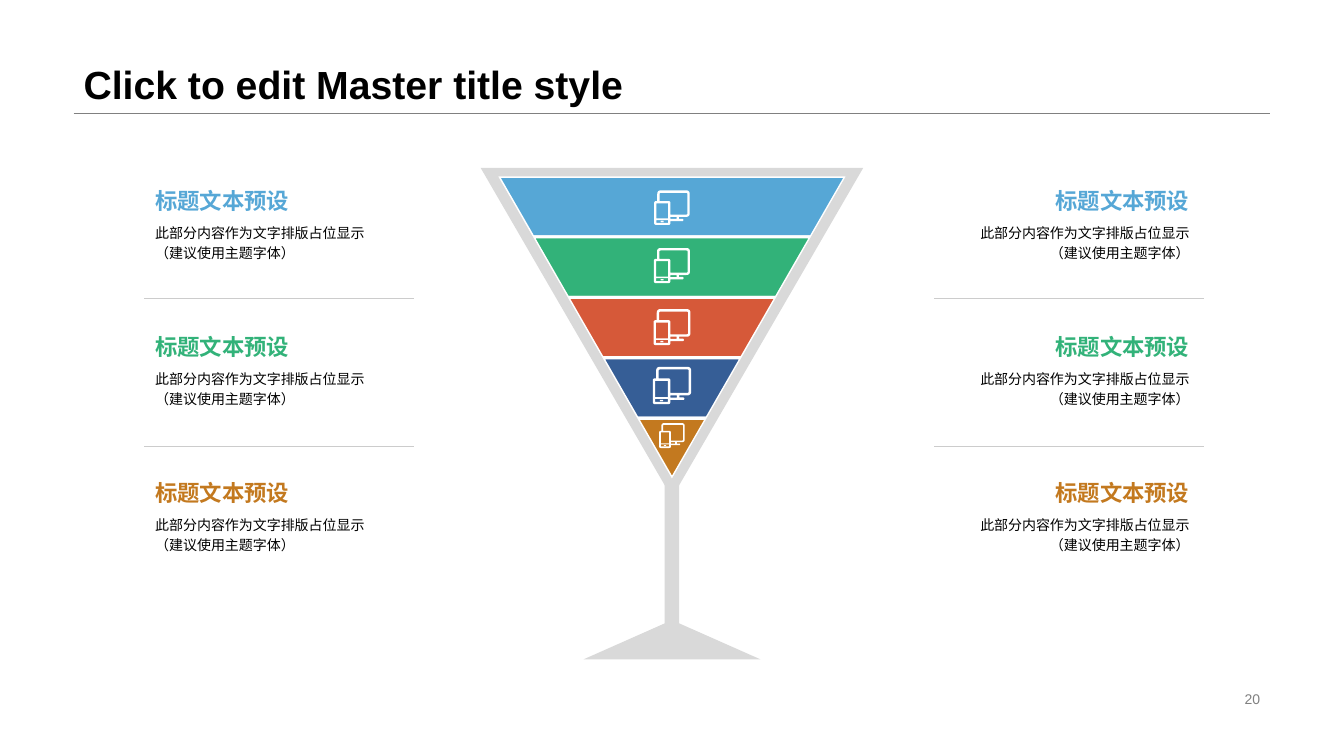
from pptx import Presentation
from pptx.dml.color import RGBColor
from pptx.enum.shapes import MSO_CONNECTOR as Connector, MSO_SHAPE as Shape
from pptx.enum.text import MSO_ANCHOR as Anchor, PP_ALIGN as Align
from pptx.oxml.ns import qn
from pptx.util import Pt
from lxml import etree

# Content
TITLE = "Click to edit Master title style"
PAGE_NUMBER = "20"
HEADING = "标题文本预设"
BODY = "此部分内容作为文字排版占位显示\v（建议使用主题字体）"
FONT = "Arial"
COLORS = {
    "blue": "56A7D6", "green": "32B279", "red": "D65939", "navy": "365E96",
    "amber": "C3791F", "glass": "D9D9D9", "white": "FFFFFF", "black": "000000",
    "grey": "808080", "divider": "CCCCCC",
}
# Band colour, icon top, icon width
BANDS = [
    ("blue", 136, 25.4), ("green", 177.2, 25.8), ("red", 220.8, 26.4),
    ("navy", 262, 27.4), ("amber", 302.3, 18.2),
]
ENTRY_COLORS = ["blue", "green", "amber"]
# Text left, divider left, alignment
COLUMNS = [(110.9, 103.2, Align.LEFT), (643.7, 667.3, Align.RIGHT)]

# Device icon on a 38-unit wide grid: x, y, corner radius
ICON_WIDTH = 38
ICON = [
    [(3.3, 0, 4), (38, 0, 4), (38, 28.4, 4), (26.3, 28.4, 0), (26.3, 30.4, 0),
     (31.2, 30.4, 1.2), (31.2, 32.9, 1.2), (17.4, 32.9, 0), (17.4, 37, 2.3),
     (0, 37, 2.3), (0, 11.4, 2.3), (3.3, 11.4, 0)],
    [(5.8, 2.6, 1.4), (35.6, 2.6, 1.4), (35.6, 25.9, 1.4), (17.4, 25.9, 0),
     (17.4, 11.4, 2.3), (5.8, 11.4, 0)],
    [(2.4, 13.9, 0), (15, 13.9, 0), (15, 30, 0), (2.4, 30, 0)],
    [(2.4, 31.7, 0), (15, 31.7, 0), (15, 34.8, 0), (2.4, 34.8, 0)],
    [(17.4, 28.4, 0), (23.9, 28.4, 0), (23.9, 30.5, 0), (17.4, 30.5, 0)],
    [(7, 32.7, 0.6), (10.2, 32.7, 0.6), (10.2, 34, 0.6), (7, 34, 0.6)],
]

# Glass geometry
CENTER = 480
RIM_HALF, RIM_TOP, RIM_TIP = 136.6, 120, 355.5
BOWL_HALF, BOWL_TOP, BOWL_TIP = 124.2, 126, 342
BAND_HEIGHT = (BOWL_TIP - BOWL_TOP) / len(BANDS)

deck = Presentation()
deck.slide_width, deck.slide_height = Pt(960), Pt(540)
page = deck.slides.add_slide(deck.slide_layouts[6])


def rgb(name):
    return RGBColor.from_string(COLORS[name])


def paint(shape, fill, line=None):
    shape.shadow.inherit = False
    shape.fill.solid()
    shape.fill.fore_color.rgb = rgb(fill)
    if line:
        shape.line.color.rgb = rgb(line)
        shape.line.width = Pt(2.25)
    else:
        shape.line.fill.background()


def add_outline(contours, fill, line=None):
    builder = None
    for contour in contours:
        points = [(Pt(x), Pt(y)) for x, y in contour]
        if builder is None:
            builder = page.shapes.build_freeform(*points[0], scale=1.0)
        else:
            builder.move_to(*points[0])
        builder.add_line_segments(points[1:], close=True)
    paint(builder.convert_to_shape(), fill, line)


def add_rule(left, right, y, color, width):
    rule = page.shapes.add_connector(
        Connector.STRAIGHT, Pt(left), Pt(y), Pt(right), Pt(y))
    rule.line.color.rgb = rgb(color)
    rule.line.width = Pt(width)
    etree.SubElement(rule._element.spPr, qn("a:effectLst"))


def add_text(text, area, size, color, bold=False, align=Align.LEFT,
             anchor=Anchor.TOP, spacing=1.0, inset=0):
    box = page.shapes.add_textbox(*[Pt(value) for value in area])
    frame = box.text_frame
    frame.word_wrap = True
    frame.vertical_anchor = anchor
    frame.margin_left = frame.margin_right = Pt(inset)
    frame.margin_top = frame.margin_bottom = Pt(inset / 2)
    para = frame.paragraphs[0]
    para.text = text
    para.alignment = align
    para.line_spacing = spacing
    for span in para.runs:
        span.font.name = FONT
        span.font.size = Pt(size)
        span.font.bold = bold
        span.font.color.rgb = rgb(color)


def bowl_edge(y):
    """Half the inner bowl width at height y."""
    return BOWL_HALF * (BOWL_TIP - y) / (BOWL_TIP - BOWL_TOP)


def round_corners(corners, steps=6):
    """Replace each corner that has a radius with a short curve."""
    points = []
    for index, (x, y, radius) in enumerate(corners):
        if not radius:
            points.append((x, y))
            continue
        ends = []
        for near_x, near_y, _ in (corners[index - 1],
                                  corners[(index + 1) % len(corners)]):
            length = abs(near_x - x) + abs(near_y - y)
            ends.append((x + (near_x - x) * radius / length,
                         y + (near_y - y) * radius / length))
        (ax, ay), (bx, by) = ends
        for step in range(steps + 1):
            t = step / steps
            a, c, b = (1 - t) ** 2, 2 * t * (1 - t), t ** 2
            points.append((a * ax + c * x + b * bx, a * ay + c * y + b * by))
    return points


# Title and page number
add_rule(52.6, 907.2, 80.9, "grey", 0.25)
add_text(TITLE, (52.6, 0, 854.6, 80.6), 28, "black", bold=True,
         anchor=Anchor.BOTTOM, spacing=0.9, inset=7.2)
add_text(PAGE_NUMBER, (678.2, 491, 229, 16.6), 10, "grey", align=Align.RIGHT,
         anchor=Anchor.MIDDLE, inset=7.2)

# Coloured bands inside the bowl
for index, (color, _, _) in enumerate(BANDS):
    top = BOWL_TOP + index * BAND_HEIGHT
    bottom = top + BAND_HEIGHT
    upper, lower = bowl_edge(top), bowl_edge(bottom)
    band = [(CENTER - upper, top), (CENTER + upper, top), (CENTER + lower, bottom)]
    if index < len(BANDS) - 1:
        band.append((CENTER - lower, bottom))
    add_outline([band], color, "white")

# Glass rim, stem and foot
rim = [(CENTER - RIM_HALF, RIM_TOP), (CENTER + RIM_HALF, RIM_TOP), (CENTER, RIM_TIP)]
bowl = [(CENTER - BOWL_HALF, BOWL_TOP), (CENTER, BOWL_TIP),
        (CENTER + BOWL_HALF, BOWL_TOP)]
add_outline([rim, bowl], "glass")
for kind, width, top, height in [(Shape.RECTANGLE, 10.4, 343, 106.3),
                                 (Shape.ISOSCELES_TRIANGLE, 126.4, 443, 28)]:
    part = page.shapes.add_shape(
        kind, Pt(CENTER - width / 2), Pt(top), Pt(width), Pt(height))
    paint(part, "glass")

# Device icons
for _, top, width in BANDS:
    scale = width / ICON_WIDTH
    left = CENTER - width / 2
    add_outline([[(left + x * scale, top + y * scale)
                  for x, y in round_corners(corners)] for corners in ICON], "white")

# Text columns with dividers
for left, rule_left, align in COLUMNS:
    for index, color in enumerate(ENTRY_COLORS):
        top = 133.6 + index * 104.4
        add_text(BODY, (left, top + 24.2, 205.9, 40.3), 10, "black",
                 align=align, spacing=1.2)
        add_text(HEADING, (left, top, 205.9, 24.5), 16, color, bold=True, align=align)
        if index < len(ENTRY_COLORS) - 1:
            add_rule(rule_left, rule_left + 192.6, 213.1 + index * 105.9, "divider", 0.5)

deck.save("out.pptx")
